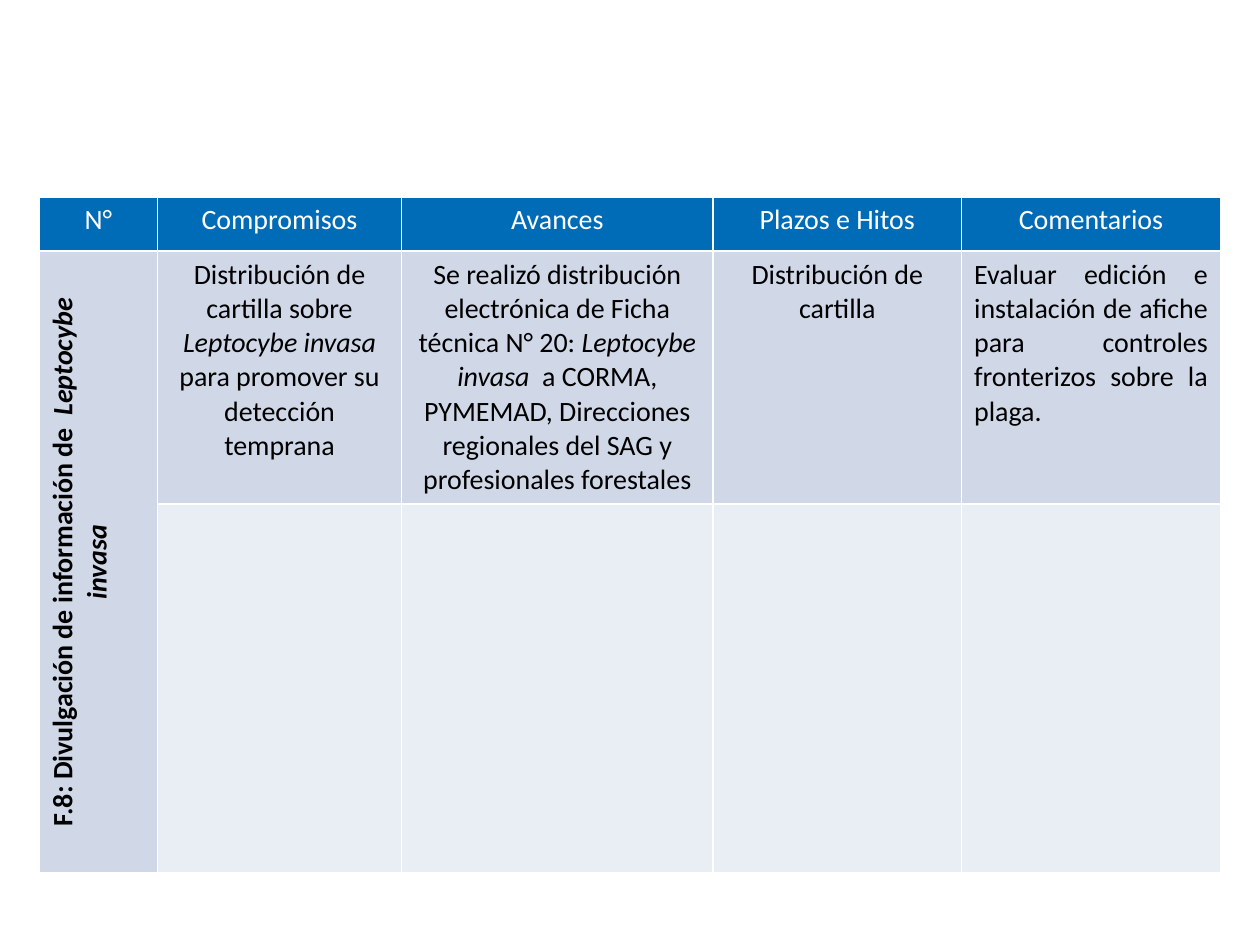
"""Build the slide with the table of commitments and progress on Leptocybe invasa."""
import pptx
import pptx.dml.color
import pptx.enum.text
import pptx.util

Pt = pptx.util.Pt
RGBColor = pptx.dml.color.RGBColor
PP_ALIGN = pptx.enum.text.PP_ALIGN

BLUE = RGBColor(0x00, 0x6C, 0xB7)
BAND_DARK = RGBColor(0xD0, 0xD8, 0xE8)
BAND_LIGHT = RGBColor(0xE9, 0xED, 0xF4)
WHITE = RGBColor(0xFF, 0xFF, 0xFF)
BLACK = RGBColor(0x00, 0x00, 0x00)

WIDTHS = [67.5, 139.5, 178, 142, 148]
HEIGHTS = [31, 144.5, 211]
HEADERS = ["N°", "Compromisos", "Avances", "Plazos e Hitos", "Comentarios"]
TOPIC = [("F.8: Divulgación de información de  ", False), ("Leptocybe invasa", True)]
DETAILS = [
    [("Distribución de cartilla sobre ", False),
     ("Leptocybe invasa ", True),
     ("para promover su detección temprana", False)],
    [("Se realizó distribución electrónica de Ficha técnica N° 20: ", False),
     ("Leptocybe invasa  ", True),
     ("a CORMA, PYMEMAD, Direcciones regionales del SAG y profesionales forestales", False)],
    [("Distribución de cartilla", False)],
    [("Evaluar edición e instalación de afiche para controles fronterizos sobre la plaga.",
      False)],
]


class SlideBuilder:
    """Hold the text style and the current slide."""

    def __init__(self, prs, font="Calibri", size=16):
        self.s = prs.slides.add_slide(prs.slide_layouts[6])
        self.font, self.size = font, size

    def table(self, left, top, widths, heights):
        """Add a table with the given column widths and row heights."""
        frame = self.s.shapes.add_table(len(heights), len(widths), Pt(left), Pt(top),
                                        Pt(sum(widths)), Pt(sum(heights)))
        for col, width in zip(frame.table.columns, widths):
            col.width = Pt(width)
        for row, height in zip(frame.table.rows, heights):
            row.height = Pt(height)
        return frame.table

    def cell(self, cell, fill, runs=(), color=BLACK, bold=False, align=PP_ALIGN.CENTER):
        """Fill a cell and write its (text, italic) runs."""
        cell.fill.solid()
        cell.fill.fore_color.rgb = fill
        p = cell.text_frame.paragraphs[0]
        p.alignment = align
        p.font.name, p.font.size = self.font, Pt(self.size)
        for text, italic in runs:
            r = p.add_run()
            r.text = text
            r.font.name, r.font.size = self.font, Pt(self.size)
            r.font.bold, r.font.italic = bold, italic
            r.font.color.rgb = color


def main():
    """Create the presentation and save it."""
    prs = pptx.Presentation()
    prs.slide_width, prs.slide_height = Pt(720), Pt(540)
    b = SlideBuilder(prs)
    table = b.table(22.5, 112.5, WIDTHS, HEIGHTS)

    for col, header in enumerate(HEADERS):
        b.cell(table.cell(0, col), BLUE, [(header, False)], color=WHITE)

    topic = table.cell(1, 0)
    topic.merge(table.cell(2, 0))
    b.cell(topic, BAND_DARK, TOPIC, bold=True)
    topic._tc.get_or_add_tcPr().set("vert", "vert270")

    for col, runs in enumerate(DETAILS, start=1):
        align = PP_ALIGN.JUSTIFY if col == len(DETAILS) else PP_ALIGN.CENTER
        b.cell(table.cell(1, col), BAND_DARK, runs, align=align)
        b.cell(table.cell(2, col), BAND_LIGHT)

    prs.save("out.pptx")


if __name__ == "__main__":
    main()
